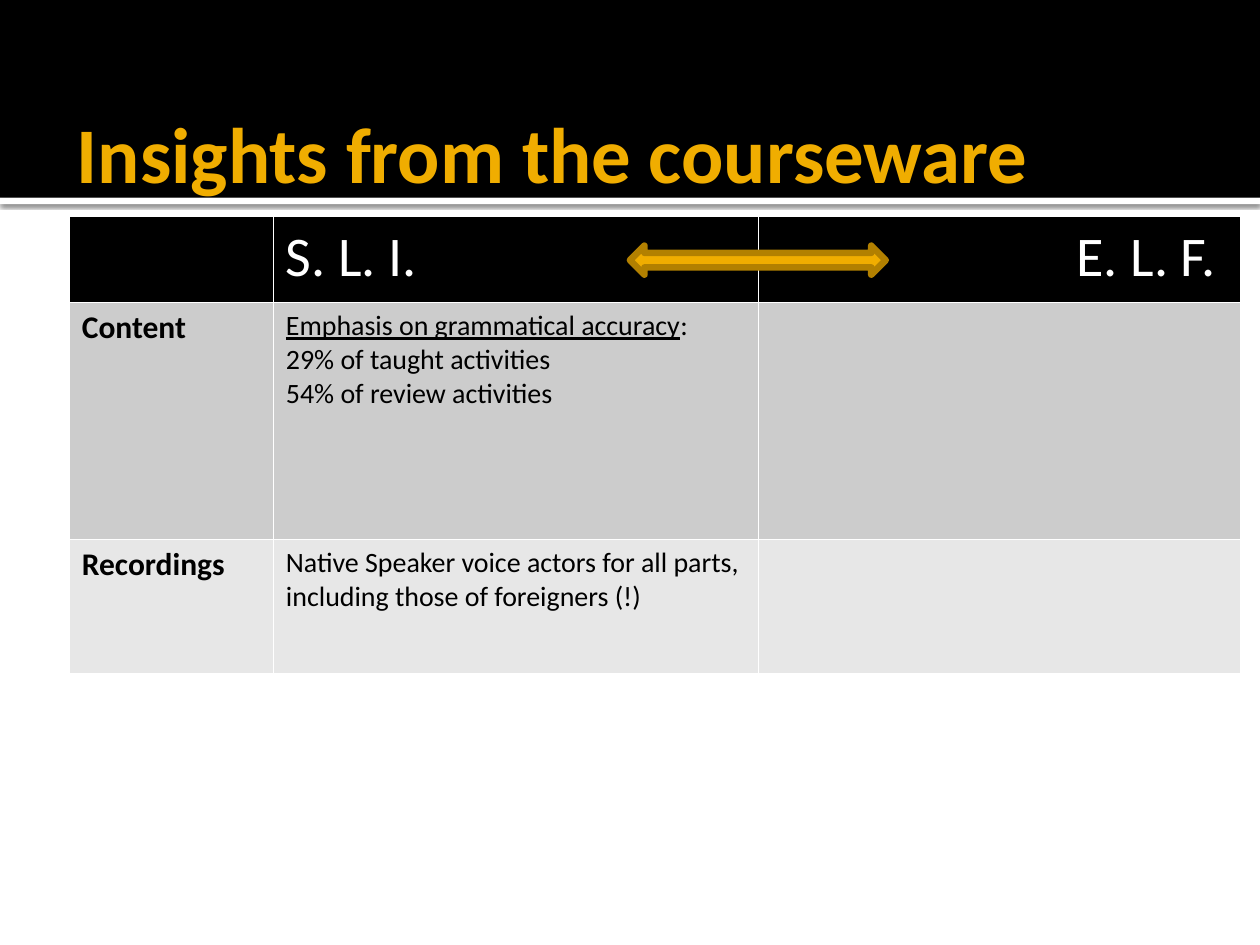
from dataclasses import dataclass

from lxml import etree
from pptx import Presentation
from pptx.dml.color import RGBColor
from pptx.enum.shapes import MSO_SHAPE
from pptx.enum.text import MSO_ANCHOR, MSO_AUTO_SIZE, PP_ALIGN
from pptx.oxml import parse_xml
from pptx.oxml.ns import nsdecls, qn
from pptx.util import Inches, Pt

RECT = MSO_SHAPE.RECTANGLE
DOUBLE_ARROW = MSO_SHAPE.LEFT_RIGHT_ARROW
MIDDLE = MSO_ANCHOR.MIDDLE
NO_FIT = MSO_AUTO_SIZE.NONE
LEFT = PP_ALIGN.LEFT
RIGHT = PP_ALIGN.RIGHT


@dataclass(frozen=True)
class Theme:
    font: str = "Calibri"
    black: str = "000000"
    white: str = "FFFFFF"
    gold: str = "F0AD00"
    dark_gold: str = "B28000"
    dark_band: str = "CCCCCC"
    light_band: str = "E7E7E7"
    title_size: float = 45
    header_size: float = 32
    label_size: float = 18
    body_size: float = 16
    border_width: float = 1
    arrow_line: float = 3.78


class SlideBuilder:
    def __init__(self, slide, theme):
        self.slide = slide
        self.theme = theme

    def run(self, p, text, size, color, bold=False, underline=False):
        r = p.add_run()
        r.text = text
        font = r.font
        font.name = self.theme.font
        font.size = Pt(size)
        font.bold = bold
        font.underline = underline
        font.color.rgb = RGBColor.from_string(color)

    def shape(self, kind, x, y, w, h, fill, line=None):
        sp = self.slide.shapes.add_shape(kind, Inches(x), Inches(y), Inches(w), Inches(h))
        sp.shadow.inherit = False
        sp.fill.solid()
        sp.fill.fore_color.rgb = RGBColor.from_string(fill)
        if line:
            sp.line.color.rgb = RGBColor.from_string(line)
            sp.line.width = Pt(self.theme.arrow_line)
        else:
            sp.line.fill.background()
        return sp

    def shadow(self, sp):
        effects = sp.element.spPr.find(qn("a:effectLst"))
        effects.append(parse_xml(
            f'<a:outerShdw {nsdecls("a")} blurRad="{Pt(2.5)}" dist="{Pt(0.8)}" '
            f'dir="5400000" rotWithShape="0"><a:srgbClr val="{self.theme.black}">'
            '<a:alpha val="60000"/></a:srgbClr></a:outerShdw>'))

    def title(self, text, x, y, w, h):
        sp = self.slide.shapes.title
        sp.left, sp.top, sp.width, sp.height = (Inches(v) for v in (x, y, w, h))
        self.slide.shapes.element.append(sp.element)
        tf = sp.text_frame
        tf.auto_size = NO_FIT
        tf.word_wrap = True
        tf.vertical_anchor = MIDDLE
        tf.margin_left = Inches(0.1)
        tf.margin_right = tf.margin_top = tf.margin_bottom = Inches(0.05)
        p = tf.paragraphs[0]
        p.alignment = LEFT
        self.run(p, text, self.theme.title_size, self.theme.gold, bold=True)

    def borders(self, cell):
        tc_pr = cell._tc.get_or_add_tcPr()
        for i, side in enumerate(("lnL", "lnR", "lnT", "lnB")):
            ln = etree.Element(qn(f"a:{side}"), w=str(Pt(self.theme.border_width)))
            fill = etree.SubElement(ln, qn("a:solidFill"))
            etree.SubElement(fill, qn("a:srgbClr"), val=self.theme.white)
            tc_pr.insert(i, ln)

    def cell(self, cell, paragraphs, fill, size, color, bold=False, align=LEFT):
        cell.fill.solid()
        cell.fill.fore_color.rgb = RGBColor.from_string(fill)
        self.borders(cell)
        tf = cell.text_frame
        for i, runs in enumerate(paragraphs):
            p = tf.add_paragraph() if i else tf.paragraphs[0]
            p.alignment = align
            for text, underline in runs:
                self.run(p, text, size, color, bold, underline)

    def table(self, x, y, widths, heights, header, rows):
        t = self.theme
        frame = self.slide.shapes.add_table(
            len(heights), len(widths), Inches(x), Inches(y),
            Inches(sum(widths)), Inches(sum(heights)))
        table = frame.table
        for column, width in zip(table.columns, widths):
            column.width = Inches(width)
        for row, height in zip(table.rows, heights):
            row.height = Inches(height)
        for col, text in enumerate(header):
            align = RIGHT if col == len(header) - 1 else LEFT
            paragraphs = [[(text, False)]] if text else []
            self.cell(table.cell(0, col), paragraphs, t.black, t.header_size, t.white, align=align)
        for i, (label, *bodies) in enumerate(rows, 1):
            fill = t.dark_band if i % 2 else t.light_band
            self.cell(table.cell(i, 0), [[(label, False)]], fill, t.label_size, t.black, bold=True)
            for col, body in enumerate(bodies, 1):
                self.cell(table.cell(i, col), body, fill, t.body_size, t.black)


def main():
    prs = Presentation()
    prs.slide_width, prs.slide_height = Inches(10), Inches(7.5)
    theme = Theme()
    s = SlideBuilder(prs.slides.add_slide(prs.slide_layouts[5]), theme)

    stripe = s.shape(RECT, 0, 1.57, 10, 0.05, theme.white)
    s.shadow(stripe)
    s.shape(RECT, 0, 0, 10, 1.57, theme.black)
    s.title("Insights from the courseware", 0.51, 0.52, 9, 1.37)

    content = [
        [("Emphasis on grammatical accuracy", True), (":", False)],
        [("29% of taught activities", False)],
        [("54% of review activities", False)],
    ]
    recordings = [[("Native Speaker voice actors for all parts, "
                    "including those of foreigners (!)", False)]]
    s.table(0.55, 1.72, (1.62, 3.85, 3.83), (0.68, 1.88, 1.07),
            ("", "S. L. I.", "E. L. F. "),
            [("Content", content, []), ("Recordings", recordings, [])])
    s.shape(DOUBLE_ARROW, 5, 1.95, 2.03, 0.23, theme.gold, theme.dark_gold)
    prs.save("out.pptx")


if __name__ == "__main__":
    main()
